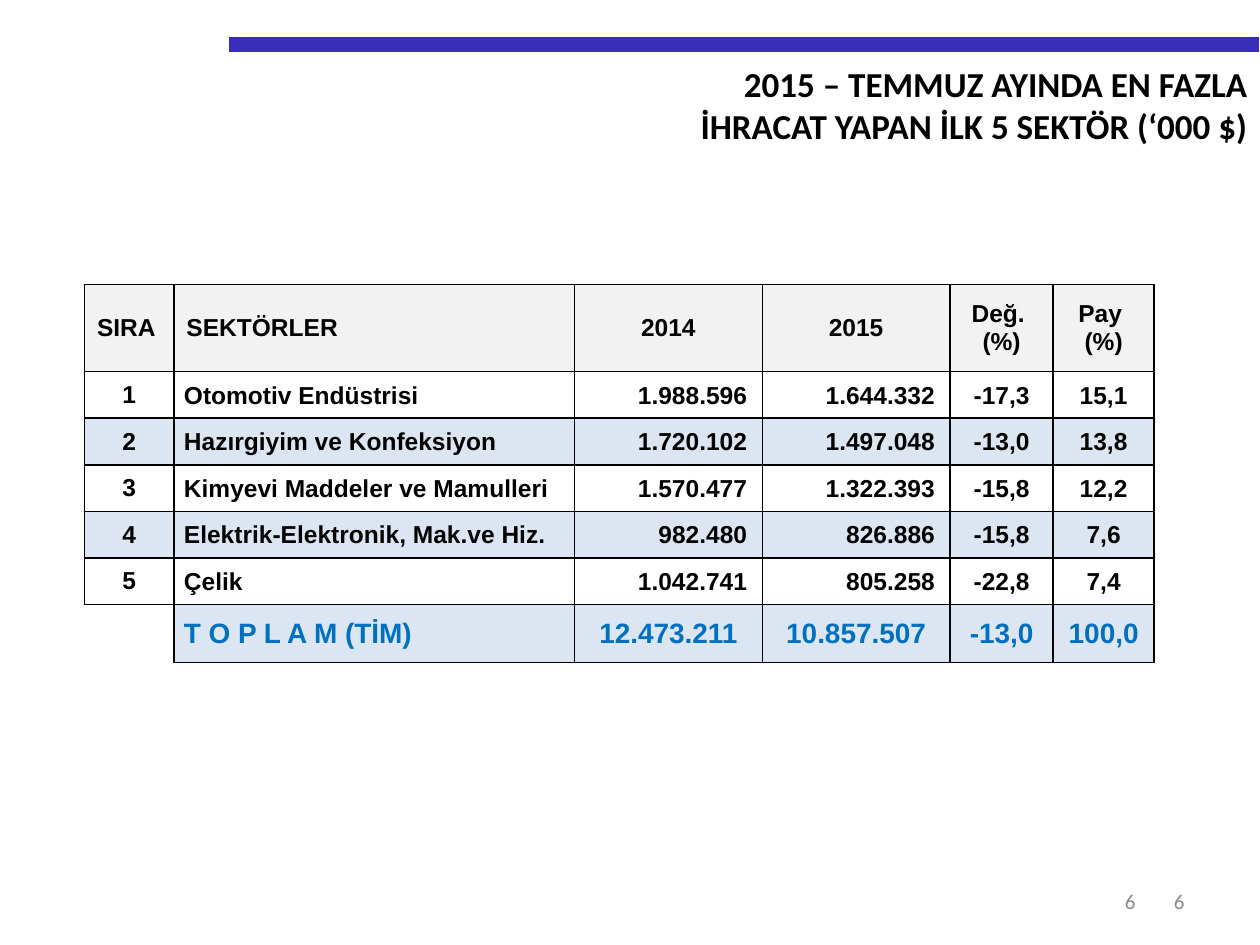
from dataclasses import dataclass

from lxml.etree import SubElement
from pptx import Presentation
from pptx.dml.color import RGBColor
from pptx.enum.shapes import MSO_CONNECTOR
from pptx.enum.text import MSO_ANCHOR, PP_ALIGN
from pptx.oxml.ns import qn
from pptx.util import Inches, Pt

LEFT, MID, RIGHT = PP_ALIGN.LEFT, PP_ALIGN.CENTER, PP_ALIGN.RIGHT
PALE, GREY, BLACK, BLUE = "DCE6F2", "F2F2F2", "000000", "0070C0"


@dataclass
class Label:
    text: str
    box: tuple[float, float, float, float]
    size: int
    color: str
    bold: bool
    anchor: MSO_ANCHOR


@dataclass
class Column:
    width: float
    head: str
    head_align: PP_ALIGN
    align: PP_ALIGN
    pads: tuple[float, float, float, float]  # left, top, right, bottom


@dataclass
class Look:
    size: int = 14
    color: str = BLACK
    fill: str | None = None


PLAIN = (0.1, 0.05, 0.1, 0.05)
TIGHT = (0.01, 0.01, 0.01, 0)
NAME = (0.08, 0.01, 0.01, 0)
SUM = (0.01, 0.01, 0.12, 0)

COLUMNS = [
    Column(0.71, "SIRA", LEFT, MID, PLAIN),
    Column(3.18, "SEKTÖRLER", LEFT, LEFT, NAME),
    Column(1.49, "2014", MID, RIGHT, SUM),
    Column(1.49, "2015", MID, RIGHT, SUM),
    Column(0.82, "Değ. \n(%)", MID, MID, TIGHT),
    Column(0.8, "Pay \n(%)", MID, MID, TIGHT),
]
SECTORS = [
    ("1", "Otomotiv Endüstrisi", "1.988.596", "1.644.332", "-17,3", "15,1"),
    ("2", "Hazırgiyim ve Konfeksiyon", "1.720.102", "1.497.048", "-13,0", "13,8"),
    ("3", "Kimyevi Maddeler ve Mamulleri", "1.570.477", "1.322.393", "-15,8", "12,2"),
    ("4", "Elektrik-Elektronik, Mak.ve Hiz.", "982.480", "826.886", "-15,8", "7,6"),
    ("5", "Çelik", "1.042.741", "805.258", "-22,8", "7,4"),
]
TOTAL = ("", "T O P L A M (TİM)", "12.473.211", "10.857.507", "-13,0", "100,0")
HEIGHTS = [0.69] + [0.37] * len(SECTORS) + [0.46]

LABELS = [
    Label("6", (7.17, 6.95, 2.33, 0.4), 12, "8C8C8C", False, MSO_ANCHOR.MIDDLE),
    Label("6", (7.01, 6.95, 2.1, 0.4), 12, "8C8C8C", False, MSO_ANCHOR.MIDDLE),
    Label("2015 – TEMMUZ AYINDA EN FAZLA\nİHRACAT YAPAN İLK 5 SEKTÖR (‘000 $)",
          (1.06, 0.45, 8.94, 0.77), 20, BLACK, True, MSO_ANCHOR.TOP),
]


def rgb(code: str) -> RGBColor:
    return RGBColor.from_string(code)


def style(frame, align: PP_ALIGN, face: str, size: int, color: str, bold: bool) -> None:
    for para in frame.paragraphs:
        para.alignment = align
        for run in para.runs:
            font = run.font
            font.name, font.size, font.bold = face, Pt(size), bold
            font.color.rgb = rgb(color)


def add_label(slide, label: Label) -> None:
    frame = slide.shapes.add_textbox(*map(Inches, label.box)).text_frame
    frame.word_wrap = True
    frame.vertical_anchor = label.anchor
    frame.text = label.text
    style(frame, RIGHT, "Calibri", label.size, label.color, label.bold)


def add_bar(slide) -> None:
    y = Inches(0.35)
    bar = slide.shapes.add_connector(
        MSO_CONNECTOR.STRAIGHT, Inches(1.82), y, Inches(9.99), y)
    bar.line.color.rgb = rgb("382EB8")
    bar.line.width = Pt(8.5)
    SubElement(bar._element.spPr, qn("a:effectLst"))


def set_edges(cell, sides: str) -> None:
    """Draw the given sides in black and clear the others."""
    props = cell._tc.get_or_add_tcPr()
    for side in "LRTB":
        edge = SubElement(props, qn(f"a:ln{side}"), w=str(Pt(1)))
        if side in sides:
            fill = SubElement(edge, qn("a:solidFill"))
            SubElement(fill, qn("a:srgbClr"), val=BLACK)
        else:
            SubElement(edge, qn("a:noFill"))


def fill_cell(cell, text: str, align: PP_ALIGN, pads: tuple, look: Look) -> None:
    set_edges(cell, "LRTB" if text else "RT")
    if look.fill and text:
        cell.fill.solid()
        cell.fill.fore_color.rgb = rgb(look.fill)
    else:
        cell.fill.background()
    cell.vertical_anchor = MSO_ANCHOR.MIDDLE
    (cell.margin_left, cell.margin_top,
     cell.margin_right, cell.margin_bottom) = map(Inches, pads)
    cell.text_frame.text = text
    style(cell.text_frame, align, "Arial", look.size, look.color, True)


def add_grid(slide) -> None:
    width = sum(col.width for col in COLUMNS)
    grid = slide.shapes.add_table(
        len(HEIGHTS), len(COLUMNS), Inches(0.67), Inches(2.26),
        Inches(width), Inches(sum(HEIGHTS))).table
    grid.first_row = grid.horz_banding = False
    for row, height in zip(grid.rows, HEIGHTS):
        row.height = Inches(height)

    last = len(HEIGHTS) - 1
    for c, col in enumerate(COLUMNS):
        grid.columns[c].width = Inches(col.width)
        # Header
        fill_cell(grid.cell(0, c), col.head, col.head_align, PLAIN, Look(fill=GREY))
        # Sectors, every second one shaded
        for r, data in enumerate(SECTORS, 1):
            look = Look(fill=None if r % 2 else PALE)
            fill_cell(grid.cell(r, c), data[c], col.align, col.pads, look)
        # Total
        named = col.pads == NAME
        fill_cell(grid.cell(last, c), TOTAL[c], LEFT if named else MID,
                  NAME if named else TIGHT, Look(16, BLUE, PALE))


def main() -> None:
    deck = Presentation()
    deck.slide_width, deck.slide_height = Inches(10), Inches(7.5)
    slide = deck.slides.add_slide(deck.slide_layouts[6])
    # Top bar, title and page numbers
    add_bar(slide)
    for label in LABELS:
        add_label(slide, label)
    # Sector table
    add_grid(slide)
    deck.save("out.pptx")


if __name__ == "__main__":
    main()
